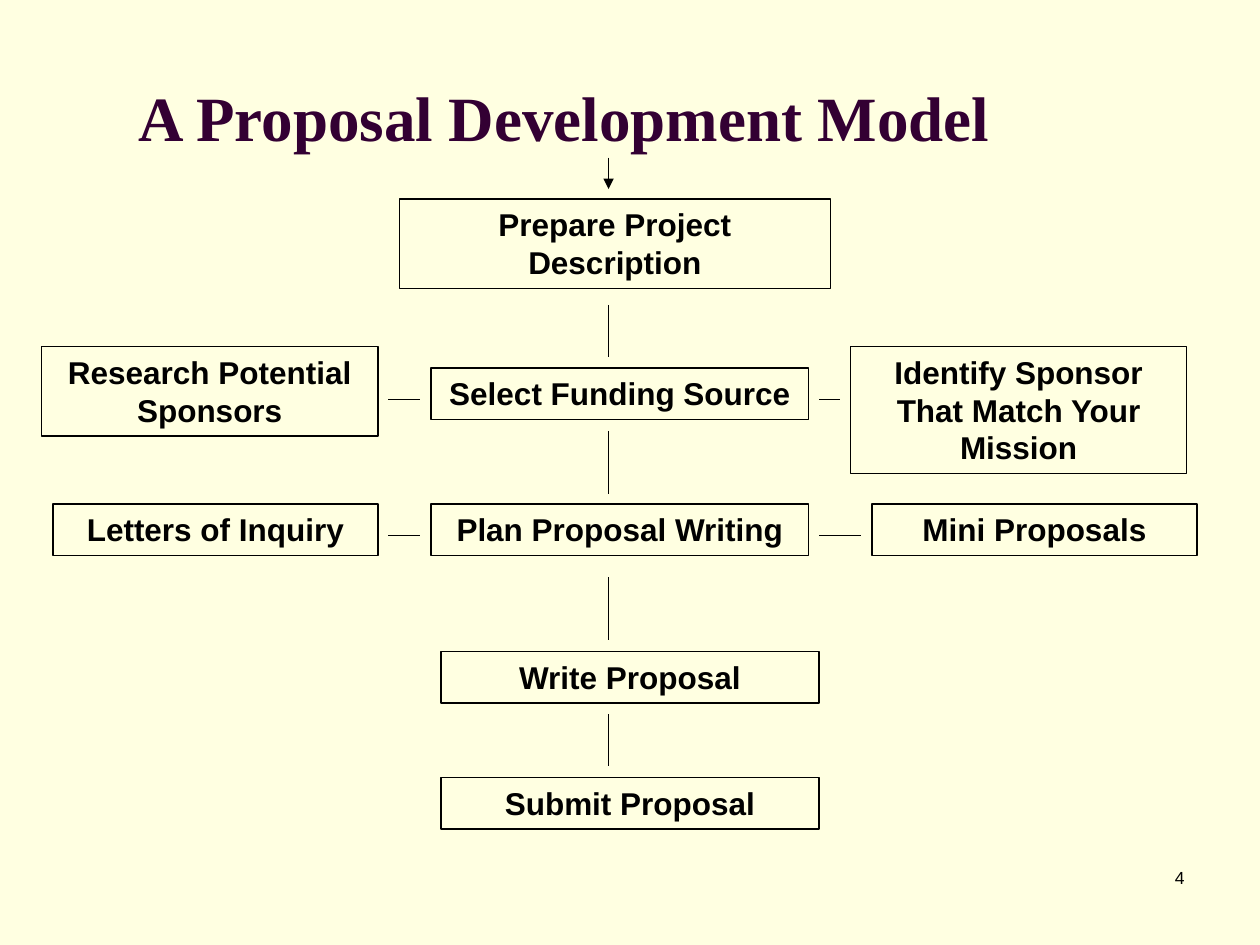
from pptx import Presentation
from pptx.dml.color import RGBColor
from pptx.enum.shapes import MSO_CONNECTOR as Conn, MSO_SHAPE as Shape
from pptx.enum.text import MSO_ANCHOR as Anchor, MSO_AUTO_SIZE as Fit, PP_ALIGN as Align
from pptx.oxml.ns import qn
from pptx.util import Inches, Pt
from lxml.etree import SubElement

COLORS = {"back": "FFFFE1", "title": "330033", "ink": "000000"}
AXIS = 4.83  # x of the vertical flow

# text, left, top, width, height
BOXES = [
    ("Prepare Project Description", 3.17, 1.58, 3.42, 0.71),
    ("Research Potential Sponsors", 0.33, 2.75, 2.67, 0.71),
    ("Select Funding Source", 3.42, 2.92, 3, 0.41),
    ("Identify Sponsor That Match Your Mission", 6.75, 2.75, 2.67, 1.01),
    ("Letters of Inquiry", 0.42, 4, 2.58, 0.41),
    ("Plan Proposal Writing", 3.42, 4, 3, 0.41),
    ("Mini Proposals", 6.92, 4, 2.58, 0.41),
    ("Write Proposal", 3.5, 5.17, 3, 0.41),
    ("Submit Proposal", 3.5, 6.17, 3, 0.41),
]
DOWN = [(2.42, 2.83), (3.42, 3.92), (4.58, 5.08), (5.67, 6.08)]  # top, bottom
ACROSS = [(3.08, 3.33, 3.17), (6.5, 6.67, 3.17),
          (3.08, 3.33, 4.25), (6.5, 6.83, 4.25)]  # left, right, y


def color(name):
    return RGBColor.from_string(COLORS[name])


def style(para, face, size, ink, align, bold=False):
    para.alignment = align
    font = para.font
    font.name, font.size, font.bold = face, Pt(size), bold
    font.color.rgb = color(ink)


def add_title(slide, text):
    title = slide.shapes.title
    title.left, title.top = Inches(1), Inches(0.3)
    title.width, title.height = Inches(8.5), Inches(1.25)
    frame = title.text_frame
    frame.text = text
    frame.vertical_anchor = Anchor.MIDDLE
    style(frame.paragraphs[0], "Times New Roman", 36, "title", Align.LEFT, True)


def add_box(slide, text, *place):
    box = slide.shapes.add_shape(Shape.RECTANGLE, *map(Inches, place))
    box.shadow.inherit = False
    box.fill.background()
    box.line.color.rgb = color("ink")
    box.line.width = Pt(0.75)
    frame = box.text_frame
    frame.word_wrap = True
    frame.auto_size = Fit.SHAPE_TO_FIT_TEXT
    frame.vertical_anchor = Anchor.TOP
    frame.text = text
    style(frame.paragraphs[0], "Arial", 18, "ink", Align.CENTER, True)


def add_line(slide, x1, y1, x2, y2, arrow=False):
    ends = map(Inches, (x1, y1, x2, y2))
    line = slide.shapes.add_connector(Conn.STRAIGHT, *ends)
    line.line.color.rgb = color("ink")
    line.line.width = Pt(0.75)
    if arrow:
        SubElement(line.line._get_or_add_ln(), qn("a:tailEnd"), type="triangle")
    SubElement(line._element.spPr, qn("a:effectLst"))


def add_number(slide, text):
    place = map(Inches, (7.42, 6.83, 2.08, 0.5))
    frame = slide.shapes.add_textbox(*place).text_frame
    frame.word_wrap = True
    frame.text = text
    style(frame.paragraphs[0], "Arial", 10, "ink", Align.RIGHT)


def main():
    deck = Presentation()
    deck.slide_width, deck.slide_height = Inches(10), Inches(7.5)
    slide = deck.slides.add_slide(deck.slide_layouts[5])
    fill = slide.background.fill
    fill.solid()
    fill.fore_color.rgb = color("back")

    add_title(slide, "A Proposal Development Model")
    for box in BOXES:
        add_box(slide, *box)
    add_line(slide, AXIS, 1.25, AXIS, 1.5, arrow=True)
    for top, bottom in DOWN:
        add_line(slide, AXIS, top, AXIS, bottom)
    for left, right, y in ACROSS:
        add_line(slide, left, y, right, y)
    add_number(slide, "4")
    deck.save("out.pptx")


if __name__ == "__main__":
    main()
